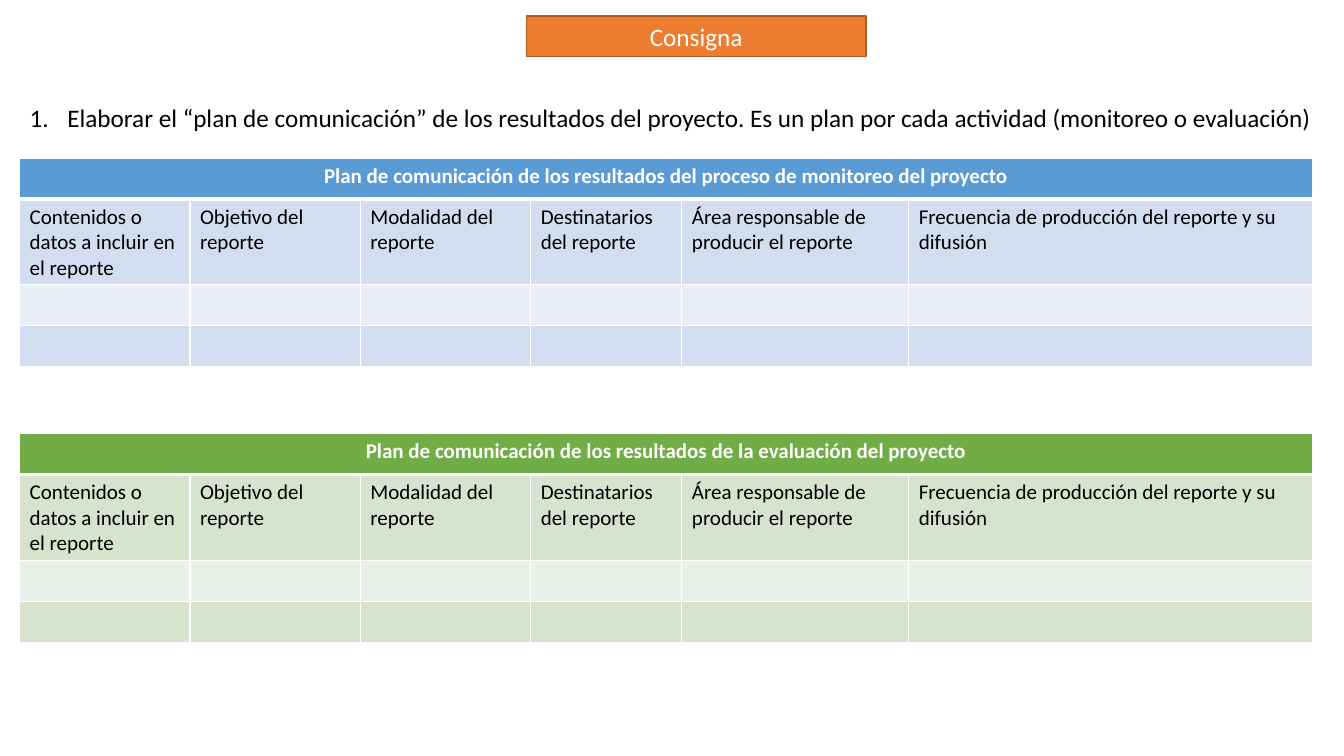
"""Build the slide with the assignment and its two communication plan tables."""
import pptx
import pptx.dml.color
import pptx.enum.text
import pptx.oxml
import pptx.oxml.ns
import pptx.util

Pt = pptx.util.Pt
RGBColor = pptx.dml.color.RGBColor
Align = pptx.enum.text.PP_ALIGN
Anchor = pptx.enum.text.MSO_ANCHOR

HEADING = "Consigna"
TASK = ("Elaborar el “plan de comunicación” de los resultados del proyecto. "
        "Es un plan por cada actividad (monitoreo o evaluación)")
COLUMNS = [
    ("Contenidos o datos a incluir en el reporte", 121.7),
    ("Objetivo del reporte", 121.7),
    ("Modalidad del reporte", 121.7),
    ("Destinatarios del reporte", 108),
    ("Área responsable de producir el reporte", 162),
    ("Frecuencia de producción del reporte y su difusión", 288.4),
]
WHITE = RGBColor(0xFF, 0xFF, 0xFF)
BLACK = RGBColor(0x00, 0x00, 0x00)
ORANGE = RGBColor(0xED, 0x7D, 0x31)
BROWN = RGBColor(0xAF, 0x5C, 0x24)
BLUES = [RGBColor(0x5B, 0x9B, 0xD5), RGBColor(0xD2, 0xDE, 0xEF), RGBColor(0xEA, 0xEF, 0xF7)]
GREENS = [RGBColor(0x70, 0xAD, 0x47), RGBColor(0xD5, 0xE3, 0xCF), RGBColor(0xEB, 0xF1, 0xE9)]
PLANS = [
    ("Plan de comunicación de los resultados del proceso de monitoreo del proyecto", 113, BLUES),
    ("Plan de comunicación de los resultados de la evaluación del proyecto", 309.6, GREENS),
]
ROW_HEIGHTS = [29.3, 61, 29.3, 29.3]
LEFT = 14


def write(frame, text, size, color, align, bold=False):
    frame.text = text
    paragraph = frame.paragraphs[0]
    paragraph.alignment = align
    font = paragraph.runs[0].font
    font.name, font.size, font.bold = "Calibri", Pt(size), bold
    font.color.rgb = color
    return paragraph


def add_borders(cell, bottom):
    properties = cell._tc.get_or_add_tcPr()
    for side, width in (("L", 1), ("R", 1), ("T", 1), ("B", bottom)):
        properties.append(pptx.oxml.parse_xml(
            f'<a:ln{side} {pptx.oxml.ns.nsdecls("a")} w="{Pt(width)}"><a:solidFill>'
            f'<a:srgbClr val="{WHITE}"/></a:solidFill></a:ln{side}>'))


def add_heading(slide):
    heading = slide.shapes.title
    heading.left, heading.top, heading.width, heading.height = Pt(376), Pt(11.5), Pt(242.6), Pt(29)
    heading.fill.solid()
    heading.fill.fore_color.rgb = ORANGE
    heading.line.color.rgb = BROWN
    heading.line.width = Pt(1)
    frame = heading.text_frame
    frame.auto_size = pptx.enum.text.MSO_AUTO_SIZE.NONE
    frame.vertical_anchor = Anchor.MIDDLE
    write(frame, HEADING, 18, WHITE, Align.CENTER)


def add_task(slide):
    frame = slide.shapes.add_textbox(Pt(LEFT), Pt(69.5), Pt(935), Pt(29)).text_frame
    frame.word_wrap = True
    properties = write(frame, TASK, 18, BLACK, Align.JUSTIFY)._p.get_or_add_pPr()
    properties.set("marL", str(Pt(27)))
    properties.set("indent", str(Pt(-27)))
    properties.append(pptx.oxml.parse_xml(
        f'<a:buFont {pptx.oxml.ns.nsdecls("a")} typeface="+mj-lt"/>'))
    properties.append(pptx.oxml.parse_xml(
        f'<a:buAutoNum {pptx.oxml.ns.nsdecls("a")} type="arabicPeriod"/>'))


def add_plan(slide, caption, top, palette):
    header, dark, light = palette
    table = slide.shapes.add_table(
        len(ROW_HEIGHTS), len(COLUMNS), Pt(LEFT), Pt(top),
        Pt(sum(width for _, width in COLUMNS)), Pt(sum(ROW_HEIGHTS))).table
    for column, (_, width) in zip(table.columns, COLUMNS):
        column.width = Pt(width)
    for index, (row, height) in enumerate(zip(table.rows, ROW_HEIGHTS)):
        row.height = Pt(height)
        for cell in row.cells:
            add_borders(cell, 3 if index == 0 else 1)
            cell.fill.solid()
            cell.fill.fore_color.rgb = (header, dark, light, dark)[index]
    table.cell(0, 0).merge(table.cell(0, len(COLUMNS) - 1))
    write(table.cell(0, 0).text_frame, caption, 15, WHITE, Align.CENTER, True)
    for cell, (label, _) in zip(table.rows[1].cells, COLUMNS):
        write(cell.text_frame, label, 15, BLACK, Align.LEFT)


def main():
    deck = pptx.Presentation()
    deck.slide_width, deck.slide_height = Pt(960), Pt(540)
    slide = deck.slides.add_slide(deck.slide_layouts[5])
    add_heading(slide)
    add_task(slide)
    for plan in PLANS:
        add_plan(slide, *plan)
    deck.save("out.pptx")


if __name__ == "__main__":
    main()
